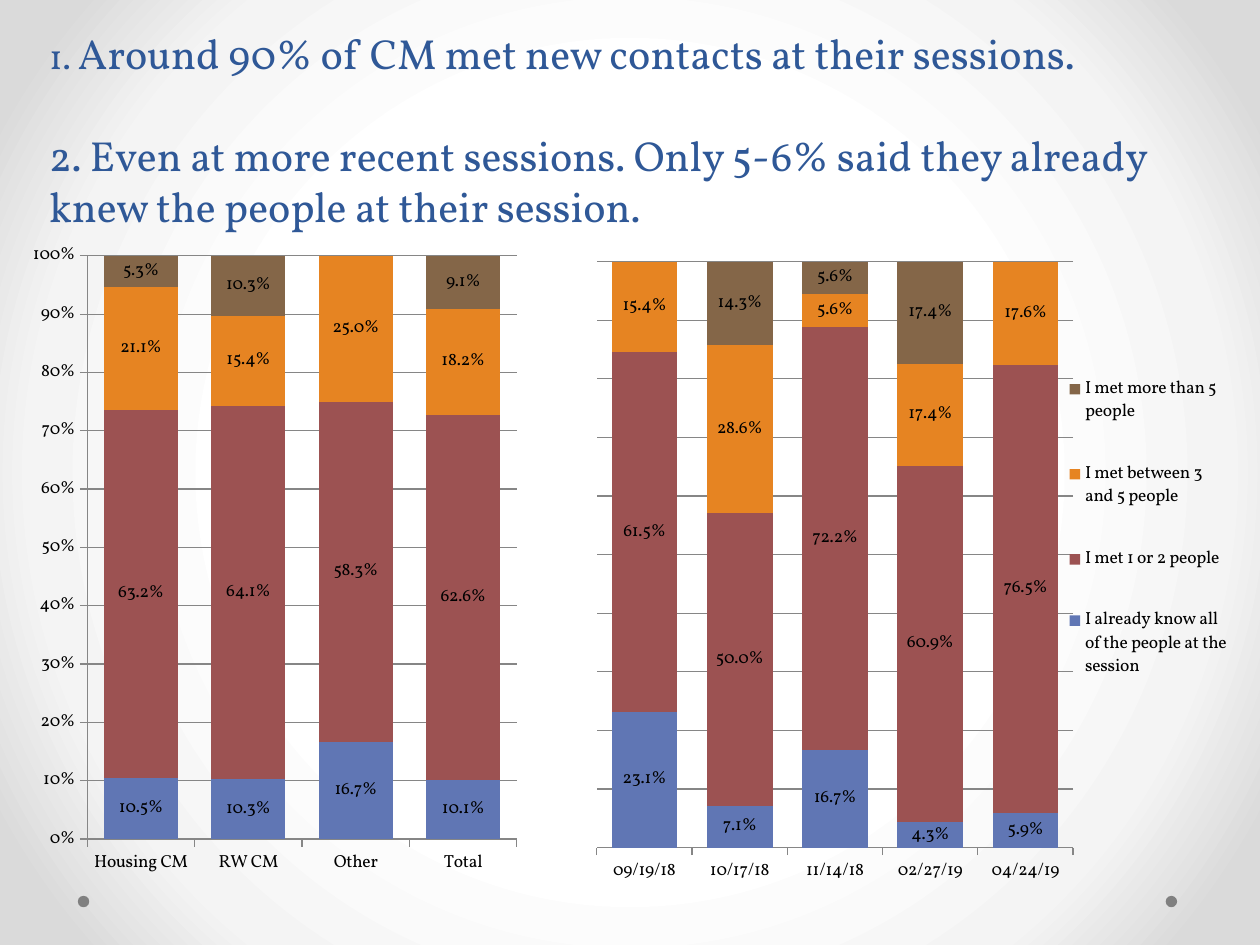
import pptx
import pptx.chart.data
import pptx.dml.color
import pptx.enum.chart
import pptx.enum.shapes
import pptx.enum.text
import pptx.oxml
import pptx.oxml.ns
import pptx.util
from pptx.util import Cm, Pt

RGBColor = pptx.dml.color.RGBColor
TITLE_BLUE = RGBColor(0x2F, 0x58, 0x97)
DOT_GREY = RGBColor(0x80, 0x80, 0x80)
LINE_GREY = RGBColor(0x86, 0x86, 0x86)
BLACK = RGBColor(0, 0, 0)
SERIES_COLORS = [
    RGBColor(0x60, 0x76, 0xB4),
    RGBColor(0x9C, 0x52, 0x52),
    RGBColor(0xE6, 0x84, 0x22),
    RGBColor(0x84, 0x66, 0x48),
]
BACKGROUND_STOPS = [(0, "FFFFFF"), (50, "FFFFFF"), (76, "F4F4F4"), (92, "DADADA")]
FONT = "Vollkorn"

ROLE_CATEGORIES = ["Housing CM", "RW CM", "Other", "Total"]
ROLE_SERIES = {
    "Series 1": [0.105, 0.103, 0.167, 0.101],
    "Series 2": [0.632, 0.641, 0.583, 0.626],
    "Series 3": [0.211, 0.154, 0.25, 0.182],
    "Series 4": [0.053, 0.103, 0, 0.091],
}
SESSION_CATEGORIES = ["09/19/18", "10/17/18", "11/14/18", "02/27/19", "04/24/19"]
SESSION_SERIES = {
    "I already know all of the people at the session": [0.231, 0.071, 0.167, 0.043, 0.059],
    "I met 1 or 2 people": [0.615, 0.5, 0.722, 0.609, 0.765],
    "I met between 3 and 5 people": [0.154, 0.286, 0.056, 0.174, 0.176],
    "I met more than 5 people": [0, 0.143, 0.056, 0.174, 0],
}


def set_background(page):
    page.background.fill.solid()
    properties = page.background.fill._xPr
    stops = "".join(
        f'<a:gs pos="{position * 1000}"><a:srgbClr val="{color}"/></a:gs>'
        for position, color in BACKGROUND_STOPS
    )
    gradient = pptx.oxml.parse_xml(
        f'<a:gradFill {pptx.oxml.ns.nsdecls("a")} rotWithShape="1"><a:gsLst>{stops}</a:gsLst>'
        '<a:path path="circle"><a:fillToRect l="50000" t="50000" r="50000" b="50000"/>'
        "</a:path></a:gradFill>"
    )
    properties.replace(properties[0], gradient)


def add_dot(page, left):
    dot = page.shapes.add_shape(
        pptx.enum.shapes.MSO_SHAPE.OVAL, left, Cm(18.06), Cm(0.23), Cm(0.23)
    )
    dot.shadow.inherit = False
    dot.fill.solid()
    dot.fill.fore_color.rgb = DOT_GREY
    dot.line.fill.background()


def add_span(para, text, size):
    span = para.add_run()
    span.text = text
    span.font.size = Pt(size)


def add_title(page):
    box = page.shapes.add_textbox(Cm(0.74), Cm(0), Cm(24.56), Cm(4.65))
    frame = box.text_frame
    frame.word_wrap = True
    frame.margin_bottom = 0
    frame.vertical_anchor = pptx.enum.text.MSO_ANCHOR.BOTTOM
    first = frame.paragraphs[0]
    add_span(first, "1. ", 20)
    add_span(first, "Around 90% of CM met new contacts at their sessions.", 24)
    second = frame.add_paragraph()
    second.space_before = Pt(29)
    add_span(
        second,
        "2. Even at more recent sessions. Only 5-6% said they already "
        "knew the people at their session.",
        24,
    )
    for para in frame.paragraphs:
        para.line_spacing = Pt(29)
        para.font.name = FONT
        para.font.color.rgb = TITLE_BLUE


def make_layout(left, top, width, height, inner=False):
    target = '<c:layoutTarget val="inner"/>' if inner else ""
    return pptx.oxml.parse_xml(
        f'<c:layout {pptx.oxml.ns.nsdecls("c")}><c:manualLayout>{target}'
        '<c:xMode val="edge"/><c:yMode val="edge"/>'
        f'<c:x val="{left}"/><c:y val="{top}"/><c:w val="{width}"/><c:h val="{height}"/>'
        "</c:manualLayout></c:layout>"
    )


def style_axes(chart):
    outside = pptx.enum.chart.XL_TICK_MARK.OUTSIDE
    values = chart.value_axis
    values.minimum_scale = 0
    values.maximum_scale = 1
    values.major_unit = 0.1
    values.has_major_gridlines = True
    values.tick_labels.number_format = "0%"
    values.tick_labels.number_format_is_linked = False
    for axis in (values, chart.category_axis):
        axis.major_tick_mark = outside
    for line in (
        values.format.line,
        values.major_gridlines.format.line,
        chart.category_axis.format.line,
    ):
        line.color.rgb = LINE_GREY
        line.width = Pt(0.75)


def style_series(plot):
    plot.gap_width = 45
    plot.overlap = 100
    plot.vary_by_categories = False
    for series, color in zip(plot.series, SERIES_COLORS):
        series.format.fill.solid()
        series.format.fill.fore_color.rgb = color
        labels = series.data_labels
        labels.show_value = True
        labels.number_format = "0.0%;;"
        labels.number_format_is_linked = False


def add_stacked_chart(page, place, categories, series, plot_layout):
    data = pptx.chart.data.CategoryChartData(number_format="0.0%")
    data.categories = categories
    for name, values in series.items():
        data.add_series(name, values)
    chart = page.shapes.add_chart(
        pptx.enum.chart.XL_CHART_TYPE.COLUMN_STACKED_100, *place, data
    ).chart
    chart.has_title = False
    chart.has_legend = False
    chart.font.name = FONT
    chart.font.size = Pt(10)
    chart.font.color.rgb = BLACK
    style_axes(chart)
    style_series(chart.plots[0])
    area = chart._chartSpace.chart.plotArea
    for old in area.findall(pptx.oxml.ns.qn("c:layout")):
        area.remove(old)
    area.insert(0, make_layout(*plot_layout, inner=True))
    return chart


def add_legend(chart, layout):
    chart.has_legend = True
    chart.legend.position = pptx.enum.chart.XL_LEGEND_POSITION.RIGHT
    chart.legend.include_in_layout = False
    chart.legend._element.insert(1, make_layout(*layout))


def main():
    deck = pptx.Presentation()
    deck.slide_width = Cm(25.4)
    deck.slide_height = Cm(19.05)
    page = deck.slides.add_slide(deck.slide_layouts[6])
    set_background(page)
    for left in (Cm(23.5), Cm(1.57)):
        add_dot(page, left)
    add_title(page)
    add_stacked_chart(
        page, (Cm(0.64), Cm(4.45), Cm(13.97), Cm(14.17)),
        ROLE_CATEGORIES, ROLE_SERIES, (0.08, 0.05, 0.62, 0.83),
    )
    sessions = add_stacked_chart(
        page, (Cm(11.63), Cm(4.88), Cm(13.34), Cm(13.13)),
        SESSION_CATEGORIES, SESSION_SERIES, (0.03, 0.03, 0.72, 0.9),
    )
    sessions.value_axis.visible = False
    add_legend(sessions, (0.75, 0.15, 0.24, 0.58))
    deck.save("out.pptx")


if __name__ == "__main__":
    main()
